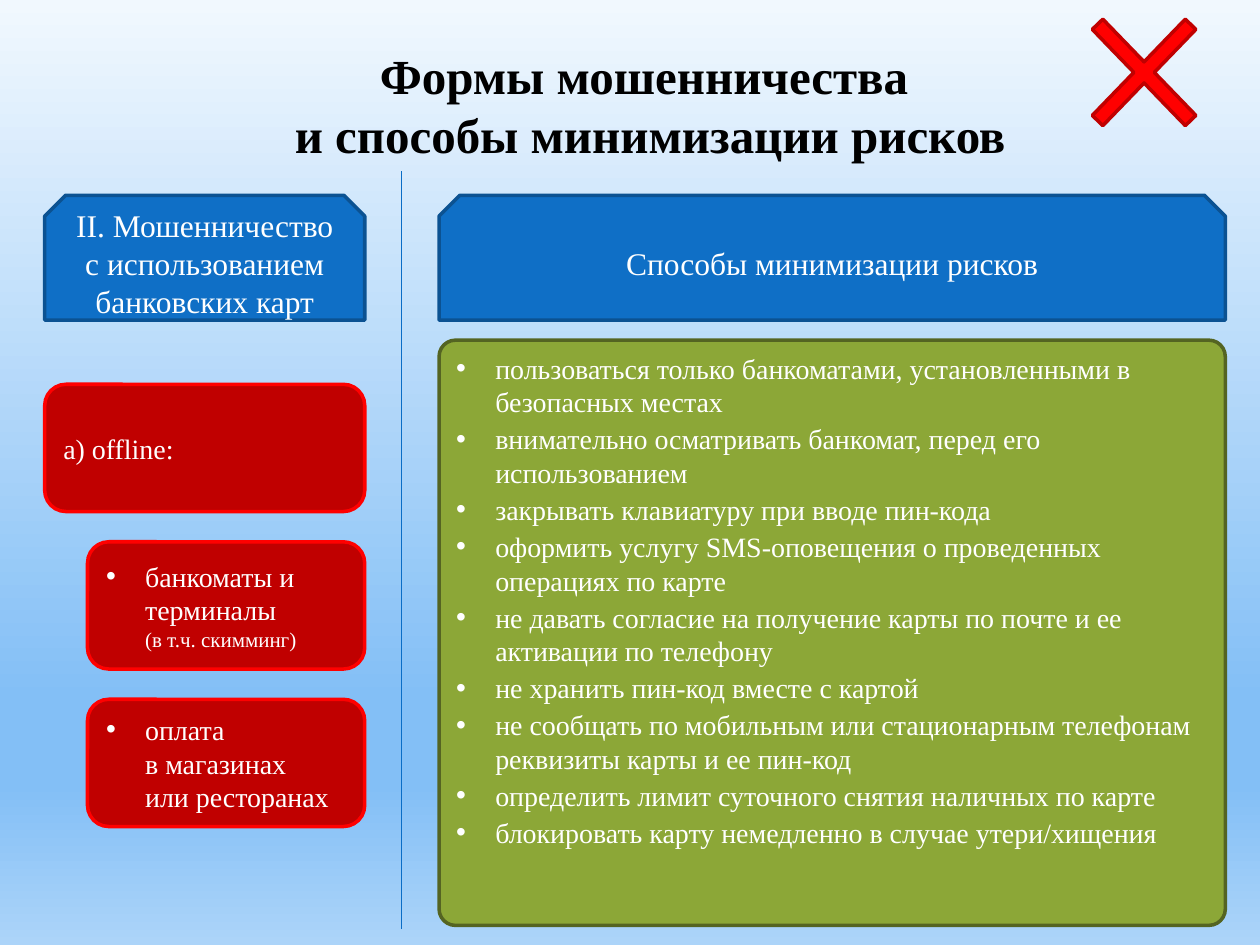
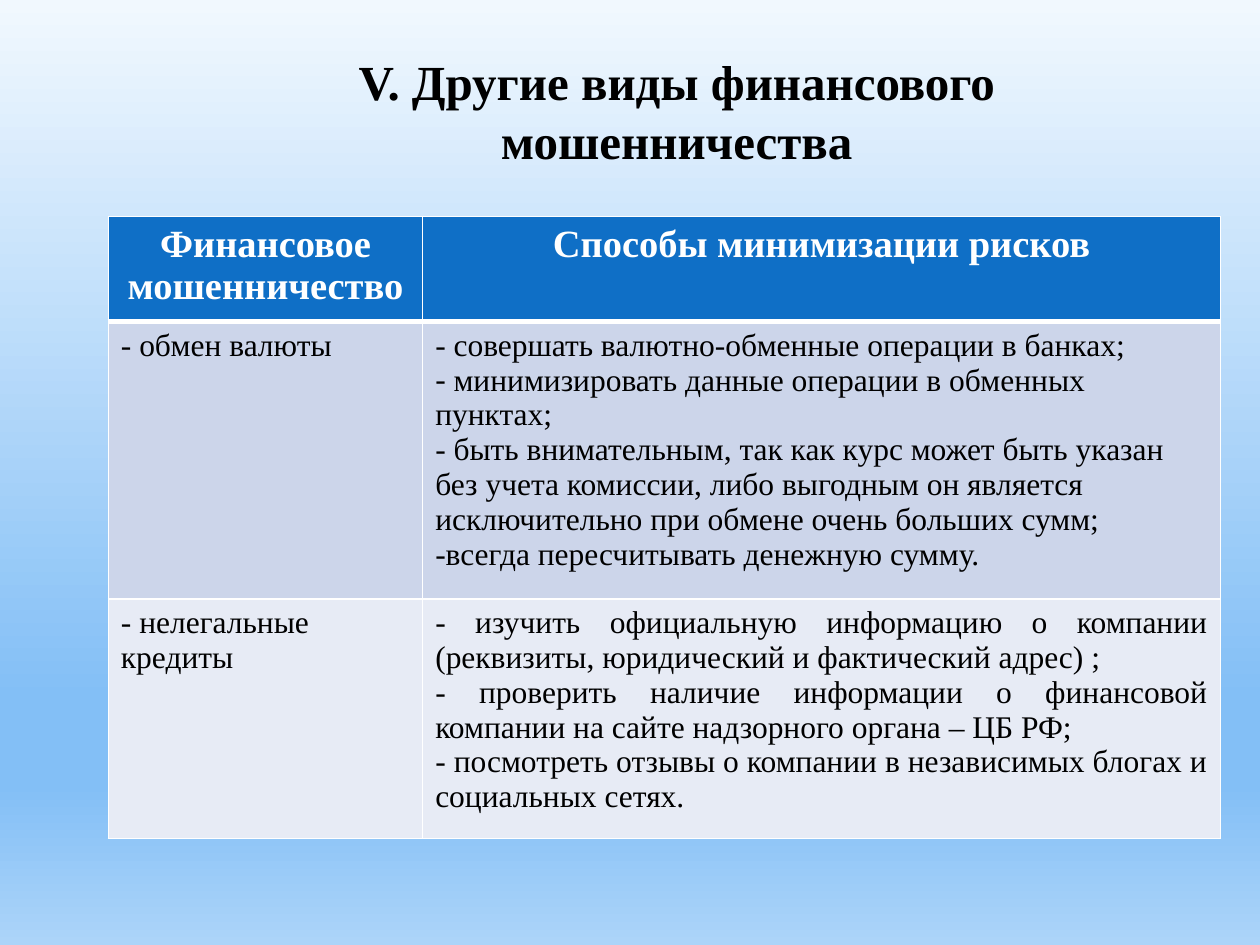
import copy

import lxml.etree
import pptx
import pptx.dml.color
import pptx.enum.dml
import pptx.enum.shapes
import pptx.enum.text
import pptx.oxml.ns
import pptx.util

COLORS = {
    "white": "FFFFFF", "black": "000000",
    "blue": "0F6FC6", "blue_edge": "0B5292", "divider": "0A6DC6",
    "red": "FF0000", "dark_red": "C00000",
    "green": "8CA737", "green_edge": "546422",
    "band_dark": "CCD5EA", "band_light": "E7EBF5",
}
BACKGROUND = [(0, "F1F8FE"), (74, "83BFF6"), (83, "83BFF6"), (100, "ACD4F9")]
FONT = "Times New Roman"
COLUMNS, ROWS = 100, 75
WIDTH, HEIGHT = pptx.util.Inches(10), pptx.util.Inches(7.5)
ALIGN = pptx.enum.text.PP_ALIGN
ANCHOR = pptx.enum.text.MSO_ANCHOR
SHAPE = pptx.enum.shapes.MSO_SHAPE
qn = pptx.oxml.ns.qn


def rgb(name):
    return pptx.dml.color.RGBColor.from_string(COLORS[name])


def sub(parent, tag, **attrs):
    return lxml.etree.SubElement(parent, qn(tag), {k: str(v) for k, v in attrs.items()})


def add_runs(p, text, size, color, bold):
    for i, line in enumerate(text.split("\n")):
        if i:
            p.add_line_break()
            p._p[-1].append(copy.deepcopy(r._r.rPr))
        r = p.add_run()
        r.text = line
        r.font.name, r.font.size, r.font.bold = FONT, pptx.util.Pt(size), bold
        r.font.color.rgb = rgb(color)


def write(tf, paragraphs, size=16, color="white", bold=False, align=ALIGN.LEFT,
          bullet=None, margin=0, indent=0, gap=0, small=None):
    for i, text in enumerate(paragraphs):
        p = tf.paragraphs[0] if i == 0 else tf.add_paragraph()
        p.alignment = align
        p.space_before = p.space_after = pptx.util.Pt(gap)
        pPr = p._p.get_or_add_pPr()
        pPr.set("marL", str(pptx.util.Inches(margin)))
        pPr.set("indent", str(pptx.util.Inches(indent)))
        if bullet:
            sub(pPr, "a:buFont", typeface=FONT if bullet == "-" else "Arial")
            sub(pPr, "a:buChar", char=bullet)
        add_runs(p, text, size, color, bold)
        if small:
            p.add_line_break()
            add_runs(p, small, 12, color, bold)


class Deck:
    def __init__(self):
        self.prs = pptx.Presentation()
        self.prs.slide_width, self.prs.slide_height = WIDTH, HEIGHT

    def x(self, columns):
        return round(WIDTH * columns / COLUMNS)

    def y(self, rows):
        return round(HEIGHT * rows / ROWS)

    def box(self, left, top, width, height):
        return self.x(left), self.y(top), self.x(width), self.y(height)

    def slide(self):
        self.s = self.prs.slides.add_slide(self.prs.slide_layouts[6])
        fill = self.s.background.fill
        fill.gradient()
        fill.gradient_angle = 270
        stops = next(self.s.element.iter(qn("a:gsLst")))
        stops.clear()
        for pos, color in BACKGROUND:
            sub(sub(stops, "a:gs", pos=pos * 1000), "a:srgbClr", val=color)

    def title(self, text, *area):
        tf = self.s.shapes.add_textbox(*self.box(*area)).text_frame
        tf.word_wrap = True
        write(tf, [text], size=28, color="black", bold=True, align=ALIGN.CENTER)

    def shape(self, kind, area, fill, edge, paragraphs=(), adj=None,
              anchor=ANCHOR.MIDDLE, **style):
        sp = self.s.shapes.add_shape(kind, *self.box(*area))
        sp.shadow.inherit = False
        sp.fill.solid()
        sp.fill.fore_color.rgb = rgb(fill)
        sp.line.color.rgb = rgb(edge)
        sp.line.width = pptx.util.Pt(2)
        if adj is not None:
            sp.adjustments[0] = adj
        tf = sp.text_frame
        tf.word_wrap, tf.vertical_anchor = True, anchor
        write(tf, paragraphs, **style)

    def header(self, text, left, width):
        self.shape(SHAPE.SNIP_2_SAME_RECTANGLE, (left, 15.5, width, 9.9), "blue",
                   "blue_edge", [text], size=18, align=ALIGN.CENTER)

    def card(self, text, left, top, **style):
        self.shape(SHAPE.ROUNDED_RECTANGLE, (left, top, 28.95 - left, 10.1),
                   "dark_red", "red", [text], **style)

    def divider(self, column, top, bottom):
        x = self.x(column)
        line = self.s.shapes.add_connector(
            pptx.enum.shapes.MSO_CONNECTOR.STRAIGHT, x, self.y(top), x, self.y(bottom))
        line.line.color.rgb = rgb("divider")
        line.line.width = pptx.util.Pt(0.75)
        sub(line._element.spPr, "a:effectLst")

    def table(self, left, top, widths, heights):
        area = self.box(left, top, sum(widths), sum(heights))
        table = self.s.shapes.add_table(len(heights), len(widths), *area).table
        for column, width in zip(table.columns, widths):
            column.width = self.x(width)
        for row, height in zip(table.rows, heights):
            row.height = self.y(height)
        for i, fill in enumerate(["blue", "band_dark", "band_light"]):
            for cell in table.rows[i].cells:
                self.borders(cell, top=3 if i == 1 else 1, bottom=3 if i == 0 else 1)
                cell.fill.solid()
                cell.fill.fore_color.rgb = rgb(fill)
        return table

    def borders(self, cell, top, bottom):
        tcPr = cell._tc.get_or_add_tcPr()
        for side, width in zip("LRTB", (1, 1, top, bottom)):
            ln = sub(tcPr, "a:ln" + side, w=pptx.util.Pt(width))
            sub(sub(ln, "a:solidFill"), "a:srgbClr", val=COLORS["white"])


def card_fraud(deck):
    deck.slide()
    deck.title("Формы мошенничества \nи способы минимизации рисков", 14.1, 3.1, 75, 10.4)
    deck.header("II. Мошенничество с использованием банковских карт", 3.55, 25.4)
    deck.header("Способы минимизации рисков", 34.85, 62.4)
    advice = [
        "пользоваться только банкоматами, установленными в безопасных местах",
        "внимательно осматривать банкомат, перед его использованием",
        "закрывать клавиатуру при вводе пин-кода",
        "оформить услугу SMS-оповещения о проведенных операциях по карте",
        "не давать согласие на получение карты по почте и ее активации по телефону",
        "не хранить пин-код вместе с картой",
        "не сообщать по мобильным или стационарным телефонам реквизиты карты и ее пин-код",
        "определить лимит суточного снятия наличных по карте",
        "блокировать карту немедленно в случае утери/хищения",
    ]
    bulleted = dict(bullet="•", margin=0.31, indent=-0.31)
    deck.shape(SHAPE.ROUNDED_RECTANGLE, (34.85, 27, 62.4, 46.45), "green", "green_edge",
               advice, adj=0.028, anchor=ANCHOR.TOP, gap=1, **bulleted)
    deck.divider(31.87, 13.6, 73.7)
    first, step = 30.5, 12.5
    deck.card("а) offline:", 3.55, first, margin=0.38, indent=-0.38)
    deck.card("банкоматы и терминалы ", 6.95, first + step,
              small="(в т.ч. скимминг)", **bulleted)
    deck.card("оплата \nв магазинах \nили ресторанах", 6.95, first + 2 * step, **bulleted)
    deck.shape(SHAPE.MATH_MULTIPLY, (83.7, -1.6, 14.2, 14.7), "red", "dark_red", adj=0.082)


def other_fraud(deck):
    deck.slide()
    deck.title("V. Другие виды финансового мошенничества", 25.6, 3.6, 56.2, 10.4)
    table = deck.table(8.6, 17.2, [24.95, 63.3], [8.25, 22, 19])
    for cell, text in zip(table.rows[0].cells,
                          ["Финансовое мошенничество", "Способы минимизации рисков"]):
        write(cell.text_frame, [text], size=22, bold=True, align=ALIGN.CENTER)
    body = dict(size=18, color="black")
    write(table.cell(1, 0).text_frame, ["- обмен валюты"], align=ALIGN.JUSTIFY, **body)
    exchange = table.cell(1, 1).text_frame
    write(exchange, [
        " совершать валютно-обменные операции в банках;",
        " минимизировать данные операции в обменных пунктах;",
        " быть внимательным, так как курс может быть указан без учета комиссии, "
        "либо выгодным он является исключительно при обмене очень больших сумм;",
        "всегда пересчитывать денежную сумму.",
    ], bullet="-", **body)
    exchange.paragraphs[-1]._p.pPr.set("indent", str(pptx.util.Inches(-0.31)))
    write(table.cell(2, 0).text_frame, ["- нелегальные кредиты"], **body)
    write(table.cell(2, 1).text_frame, [
        "- изучить официальную информацию о компании "
        "(реквизиты, юридический и фактический адрес) ;",
        "- проверить наличие информации о финансовой компании "
        "на сайте надзорного органа – ЦБ РФ;",
        "- посмотреть отзывы о компании в независимых блогах и социальных сетях.",
    ], align=ALIGN.JUSTIFY, **body)


def main():
    deck = Deck()
    card_fraud(deck)
    other_fraud(deck)
    deck.prs.save("out.pptx")


if __name__ == "__main__":
    main()
